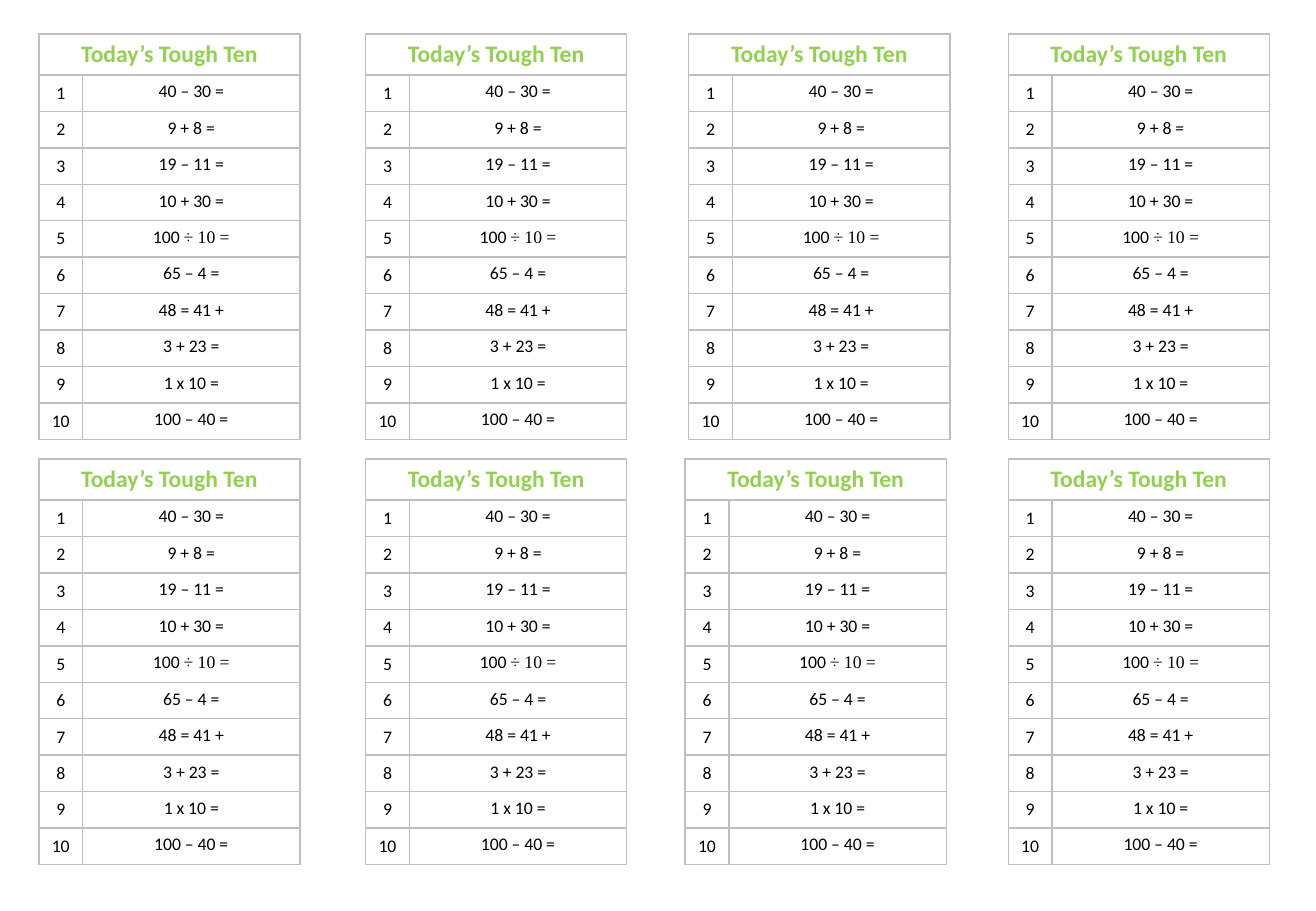
"""Build a sheet of eight identical mental arithmetic cards."""
from pptx import Presentation
from pptx.dml.color import RGBColor
from pptx.enum import text
from pptx.oxml import parse_xml
from pptx.oxml.ns import nsdecls
from pptx.util import Pt

TITLE = "Today’s Tough Ten"
BODY_FONT, SIGN_FONT = "Calibri", "Times New Roman"
QUESTIONS = [
    [("40 – 30 =", BODY_FONT)],
    [("9 + 8 =", BODY_FONT)],
    [("19 – 11 =", BODY_FONT)],
    [("10 + 30 =", BODY_FONT)],
    [("100 ", BODY_FONT), ("÷ 10 =", SIGN_FONT)],
    [("65 – 4 =", BODY_FONT)],
    [("48 = 41 +", BODY_FONT)],
    [("3 + 23 =", BODY_FONT)],
    [("1 x 10 =", BODY_FONT)],
    [("100 – 40 =", BODY_FONT)],
]
COLORS = {"title": "92D050", "text": "000000", "border": "BFBFBF"}
CARD_ROWS = [
    (20.16, [23.04, 216.72, 408.24, 597.6]),
    (272.16, [23.04, 216.72, 406.08, 597.6]),
]
COLUMN_WIDTHS = [25.92, 128.88]
TITLE_HEIGHT, QUESTION_HEIGHT, CARD_HEIGHT = 18, 21.6, 240


def line_xml(tag, width, color):
    return parse_xml(
        f'<a:{tag} {nsdecls("a")} w="{Pt(width)}"><a:solidFill>'
        f'<a:srgbClr val="{color}"/></a:solidFill></a:{tag}>')


def write(cell, pieces, size=10.5, color="text", bold=False):
    para = cell.text_frame.paragraphs[0]
    para.alignment = text.PP_ALIGN.CENTER
    for wording, font in pieces:
        span = para.add_run()
        span.text = wording
        span.font.name = font
        span.font.size = Pt(size)
        span.font.bold = bold
        span.font.color.rgb = RGBColor.from_string(COLORS[color])
    return span


def style_cell(cell):
    cell.fill.background()
    properties = cell._tc.get_or_add_tcPr()
    for index, side in enumerate(("lnL", "lnR", "lnT", "lnB")):
        properties.insert(index, line_xml(side, 1, COLORS["border"]))


def add_card(page, left, top):
    frame = page.shapes.add_table(
        len(QUESTIONS) + 1, 2, Pt(left), Pt(top),
        Pt(sum(COLUMN_WIDTHS)), Pt(CARD_HEIGHT))
    card = frame.table
    card.first_row = card.horz_banding = False
    for column, width in zip(card.columns, COLUMN_WIDTHS):
        column.width = Pt(width)
    for index, row in enumerate(card.rows):
        row.height = Pt(QUESTION_HEIGHT if index else TITLE_HEIGHT)
        for cell in row.cells:
            style_cell(cell)
    frame.height = Pt(CARD_HEIGHT)

    card.cell(0, 0).merge(card.cell(0, 1))
    title = write(card.cell(0, 0), [(TITLE, BODY_FONT)], 14, "title", True)
    title.font._element.insert(0, line_xml("ln", 0.25, COLORS["text"]))
    for number, question in enumerate(QUESTIONS, 1):
        number_cell = card.cell(number, 0)
        number_cell.vertical_anchor = text.MSO_ANCHOR.MIDDLE
        write(number_cell, [(str(number), BODY_FONT)])
        write(card.cell(number, 1), question)


def main():
    deck = Presentation()
    deck.slide_width, deck.slide_height = Pt(780), Pt(540)
    page = deck.slides.add_slide(deck.slide_layouts[6])
    for top, lefts in CARD_ROWS:
        for left in lefts:
            add_card(page, left, top)
    deck.save("out.pptx")


if __name__ == "__main__":
    main()
